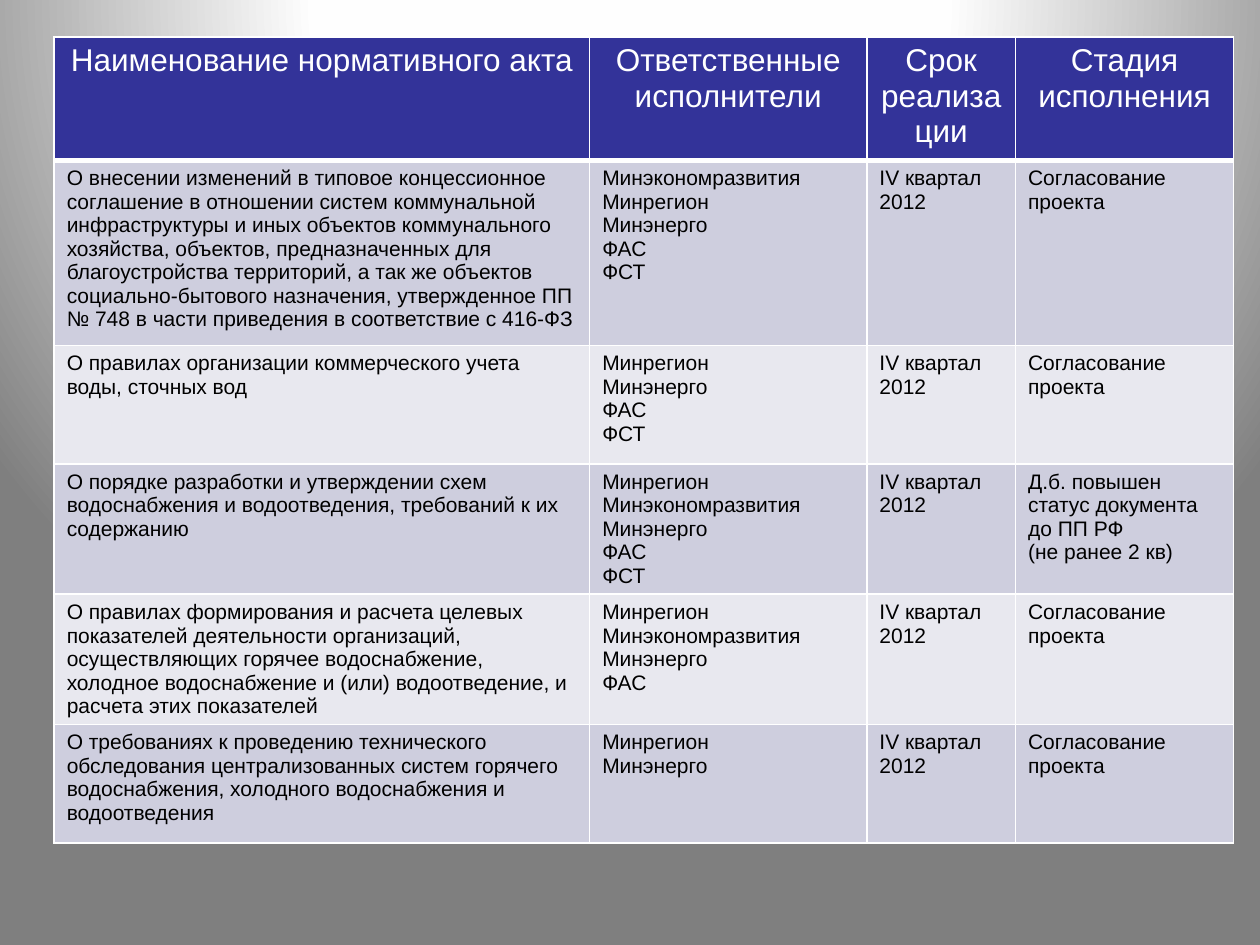
from lxml import etree
from pptx import Presentation, util as u
from pptx.dml.color import RGBColor
from pptx.enum import text
from pptx.oxml import parse_xml
from pptx.oxml.ns import nsdecls, qn

WIDE, HIGH = u.Inches(10), u.Inches(7.5)
HUES = {"head": "333399", "odd": "CECEDE", "even": "E8E8EF",
        "line": "FFFFFF", "ink": "000000"}
GLOW = [(0, "FFFFFF"), (40, "FEFEFE"), (100, "7F7F7F")]
BOX = (0.043, 0.039, 0.936, 0.828)
COLS = [4.25, 2.2, 1.18, 1.73]
ROWS = [0.98, 1.47] + [0.94] * 4

TERM = "IV квартал 2012"
STAGE = "Согласование\nпроекта"
HEADS = ["Наименование нормативного акта", "Ответственные исполнители",
         "Срок реализации", "Стадия исполнения"]
ACTS = [
    ("О внесении изменений в типовое концессионное соглашение в отношении "
     "систем коммунальной инфраструктуры и иных объектов коммунального "
     "хозяйства, объектов, предназначенных для благоустройства территорий, "
     "а так же объектов социально-бытового назначения, утвержденное ПП № 748 "
     "в части приведения в соответствие с 416-ФЗ",
     "Минэкономразвития\nМинрегион\nМинэнерго\nФАС\nФСТ", STAGE),
    ("О правилах организации коммерческого учета воды, сточных вод",
     "Минрегион\nМинэнерго\nФАС\nФСТ", STAGE),
    ("О порядке разработки и утверждении схем водоснабжения и водоотведения, "
     "требований к их содержанию",
     "Минрегион\nМинэкономразвития\nМинэнерго\nФАС\nФСТ",
     "Д.б. повышен статус документа до ПП РФ\n(не ранее 2 кв)"),
    ("О правилах формирования и расчета целевых показателей деятельности "
     "организаций, осуществляющих горячее водоснабжение, холодное "
     "водоснабжение и (или) водоотведение, и расчета этих показателей",
     "Минрегион\nМинэкономразвития\nМинэнерго\nФАС", STAGE),
    ("О требованиях к проведению технического обследования централизованных "
     "систем горячего водоснабжения, холодного водоснабжения и водоотведения",
     "Минрегион\nМинэнерго", STAGE),
]


def write(frame, words, size=12, hue="ink", align=text.PP_ALIGN.LEFT):
    frame.text = words
    for para in frame.paragraphs:
        para.alignment = align
        for run in para.runs:
            run.font.name = "Arial"
            run.font.size = u.Pt(size)
            run.font.color.rgb = RGBColor.from_string(HUES[hue])


def edge(cell, base=1):
    props = cell._tc.get_or_add_tcPr()
    for side, width in zip("LRTB", (1, 1, 1, base)):
        line = etree.SubElement(props, qn(f"a:ln{side}"), w=str(u.Pt(width)))
        fill = etree.SubElement(line, qn("a:solidFill"))
        etree.SubElement(fill, qn("a:srgbClr"), val=HUES["line"])


def paint(cell, hue):
    cell.fill.solid()
    cell.fill.fore_color.rgb = RGBColor.from_string(HUES[hue])


def backdrop(slide):
    slide.background.fill.gradient()
    old = slide._element.find(".//" + qn("a:gradFill"))
    stops = "".join(f'<a:gs pos="{pos * 1000}"><a:srgbClr val="{hue}"/></a:gs>'
                    for pos, hue in GLOW)
    new = parse_xml(
        f'<a:gradFill {nsdecls("a")} rotWithShape="1"><a:gsLst>{stops}</a:gsLst>'
        '<a:path path="circle"><a:fillToRect l="50000" t="-80000" '
        'r="50000" b="180000"/></a:path></a:gradFill>')
    old.getparent().replace(old, new)


def plan(slide, box):
    left, top, width, height = (
        int(part * full) for part, full in zip(box, (WIDE, HIGH) * 2))
    grid = slide.shapes.add_table(
        len(ROWS), len(COLS), left, top, width, height).table
    for col, share in zip(grid.columns, COLS):
        col.width = int(width * share / sum(COLS))
    for row, tall in zip(grid.rows, ROWS):
        row.height = u.Inches(tall)
    body = [(act, who, TERM, stage) for act, who, stage in ACTS]
    for r, line in enumerate([HEADS] + body):
        for c, words in enumerate(line):
            cell = grid.cell(r, c)
            if r == 0:
                write(cell.text_frame, words, size=18, hue="line",
                      align=text.PP_ALIGN.CENTER)
                edge(cell, base=3)
                paint(cell, "head")
            else:
                write(cell.text_frame, words)
                edge(cell)
                paint(cell, "odd" if r % 2 else "even")


def main():
    deck = Presentation()
    deck.slide_width, deck.slide_height = WIDE, HIGH
    slide = deck.slides.add_slide(deck.slide_layouts[6])
    backdrop(slide)
    plan(slide, BOX)
    deck.save("out.pptx")


if __name__ == "__main__":
    main()
